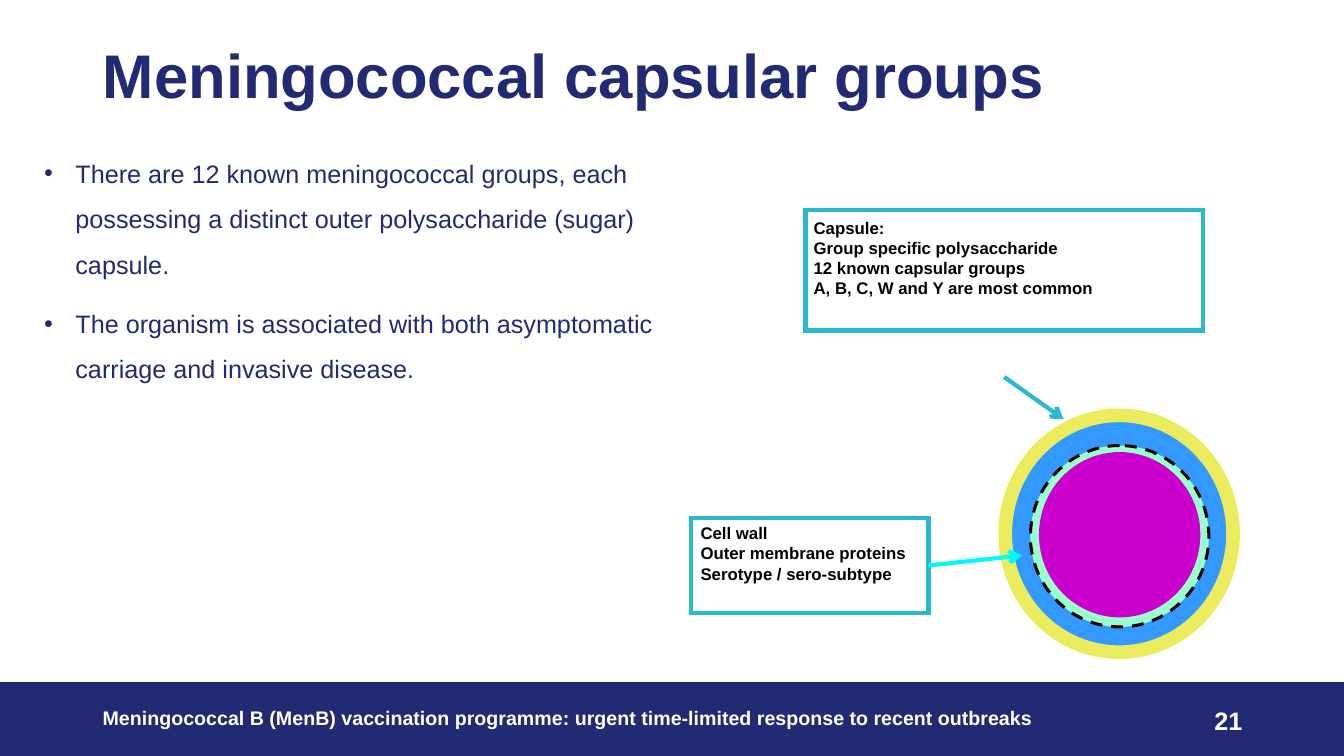
from math import cos, radians, sin

from lxml.etree import SubElement
from pptx import Presentation
from pptx.dml.color import RGBColor
from pptx.enum.shapes import MSO_CONNECTOR, MSO_SHAPE
from pptx.enum.text import MSO_ANCHOR, PP_ALIGN
from pptx.oxml.ns import qn
from pptx.util import Inches, Pt

COLOURS = {
    "navy": "212A73",
    "white": "FFFFFF",
    "black": "000000",
    "teal": "29B8CE",
    "cyan": "00F9F9",
    "yellow": "EAEC5E",
    "blue": "3399FF",
    "mint": "99FFCC",
    "magenta": "CC00CC",
}
DASH_COUNT = 27
DASH_STEP = 13.42
DASH_SPAN = 7.7


def colour(name):
    return RGBColor.from_string(COLOURS[name])


def lengths(box):
    return [Inches(value) for value in box]


def write(frame, lines, size, colour_name, bold=True, align=PP_ALIGN.LEFT):
    frame.word_wrap = True
    frame.vertical_anchor = MSO_ANCHOR.TOP
    frame.text = "\n".join(lines)
    for para in frame.paragraphs:
        para.alignment = align
        for span in para.runs:
            span.font.name = "Arial"
            span.font.size = Pt(size)
            span.font.bold = bold
            span.font.color.rgb = colour(colour_name)


def add_text(slide, box, lines, size, colour_name, **style):
    frame = slide.shapes.add_textbox(*lengths(box)).text_frame
    write(frame, lines, size, colour_name, **style)
    return frame


def paint(figure, fill, line=None, width=0):
    figure.shadow.inherit = False
    figure.fill.solid()
    figure.fill.fore_color.rgb = colour(fill)
    if line:
        figure.line.color.rgb = colour(line)
        figure.line.width = Pt(width)
    else:
        figure.line.fill.background()


def add_figure(slide, kind, box, fill, line=None, width=0):
    figure = slide.shapes.add_shape(kind, *lengths(box))
    paint(figure, fill, line, width)
    return figure


def add_title(slide, box, text):
    title = slide.shapes.title
    title.left, title.top, title.width, title.height = lengths(box)
    write(title.text_frame, [text], 44, "navy")
    title.text_frame.paragraphs[0].line_spacing = 0.9


def add_bullets(slide, box, points):
    frame = add_text(slide, box, points, 18, "navy", bold=False)
    for index, para in enumerate(frame.paragraphs):
        properties = para._p.get_or_add_pPr()
        properties.set("marL", str(Inches(0.31)))
        properties.set("indent", str(-Inches(0.31)))
        SubElement(properties, qn("a:buFont")).set("typeface", "Arial")
        SubElement(properties, qn("a:buChar")).set("char", "•")
        para.line_spacing = 1.5
        if index:
            para.space_before = Pt(10)


def add_footer(slide, box, text, number):
    left, top, width, height = box
    add_figure(slide, MSO_SHAPE.RECTANGLE, box, "navy", "navy", 1)
    text_top = top + 0.18
    add_text(slide, (left + 0.92, text_top, 10.44, 0.4), [text], 14, "white")
    add_text(slide, (left + width - 3.91, text_top, 3, 0.4), [number], 18, "white",
             align=PP_ALIGN.RIGHT)


def add_dashed_ring(slide, box):
    left, top, width, height = box

    def ring_point(angle, offset):
        turn = radians(angle)
        return (Inches(left + width / 2 - (width / 2 + offset) * sin(turn)),
                Inches(top + height / 2 - (height / 2 + offset) * cos(turn)))

    for index in range(DASH_COUNT):
        angles = [index * DASH_STEP + DASH_SPAN * part / 2 for part in range(3)]
        outer = [ring_point(angle, 0.015) for angle in angles]
        inner = [ring_point(angle, -0.015) for angle in reversed(angles)]
        builder = slide.shapes.build_freeform(*outer[0])
        builder.add_line_segments(outer[1:] + inner, close=True)
        paint(builder.convert_to_shape(), "black")


def add_cell(slide, box):
    left, top, width, height = box
    membrane = (left + 0.25, top + 0.3, width - 0.49, height - 0.55)
    add_figure(slide, MSO_SHAPE.OVAL, box, "blue", "yellow", 9.75)
    add_figure(slide, MSO_SHAPE.OVAL, membrane, "mint")
    add_dashed_ring(slide, membrane)
    add_figure(slide, MSO_SHAPE.OVAL, (left + 0.34, top + 0.37, width - 0.67, height - 0.72),
               "magenta", "magenta", 0.75)


def add_label(slide, box, lines, side_margin, end_margin):
    label = add_figure(slide, MSO_SHAPE.RECTANGLE, box, "white", "teal", 3)
    SubElement(label.element.spPr.find(qn("a:ln")), qn("a:miter")).set("lim", "800000")
    frame = label.text_frame
    frame.margin_left = frame.margin_right = Inches(side_margin)
    frame.margin_top = frame.margin_bottom = Inches(end_margin)
    write(frame, lines, 12, "black")
    return label


def add_arrow(slide, start, end, colour_name):
    arrow = slide.shapes.add_connector(MSO_CONNECTOR.STRAIGHT, *lengths(start + end))
    arrow.line.color.rgb = colour(colour_name)
    arrow.line.width = Pt(3)
    properties = arrow.element.spPr
    SubElement(properties.find(qn("a:ln")), qn("a:tailEnd")).set("type", "arrow")
    SubElement(properties, qn("a:effectLst"))
    return arrow


def add_diagram(slide, box):
    left, top, width, height = box
    add_cell(slide, (left + 3.12, top + 2.04, 2.26, 2.35))
    add_label(slide, (left + 1.14, top, 3.94, 1.2), [
        "Capsule:",
        "Group specific polysaccharide",
        "12 known capsular groups",
        "A, B, C, W and Y are most common",
    ], 0.08, 0.08)
    wall = add_label(slide, (left, top + 3.06, 2.36, 0.94), [
        "Cell wall",
        "Outer membrane proteins",
        "Serotype / sero-subtype",
    ], 0.1, 0.05)
    add_arrow(slide, (left + 3.11, top + 1.66), (left + 3.7, top + 2.08), "teal")
    wall_arrow = add_arrow(slide, (left + 2.36, top + 3.53), (left + 3.29, top + 3.43), "cyan")
    wall_arrow.begin_connect(wall, 3)


def main():
    deck = Presentation()
    deck.slide_width, deck.slide_height = Inches(13.33), Inches(7.5)
    slide = deck.slides.add_slide(deck.slide_layouts[5])
    add_footer(
        slide, (0, 6.77, 13.33, 0.73),
        "Meningococcal B (MenB) vaccination programme: urgent time-limited response to recent outbreaks",
        "21",
    )
    add_title(slide, (0.92, 0.4, 11.5, 1.45), "Meningococcal capsular groups")
    add_bullets(slide, (0.34, 1.37, 6.5, 4.23), [
        "There are 12 known meningococcal groups, each possessing a distinct outer "
        "polysaccharide (sugar) capsule.",
        "The organism is associated with both asymptomatic carriage and invasive disease.",
    ])
    add_diagram(slide, (6.85, 2.08, 5.38, 4.39))
    deck.save("out.pptx")


if __name__ == "__main__":
    main()
